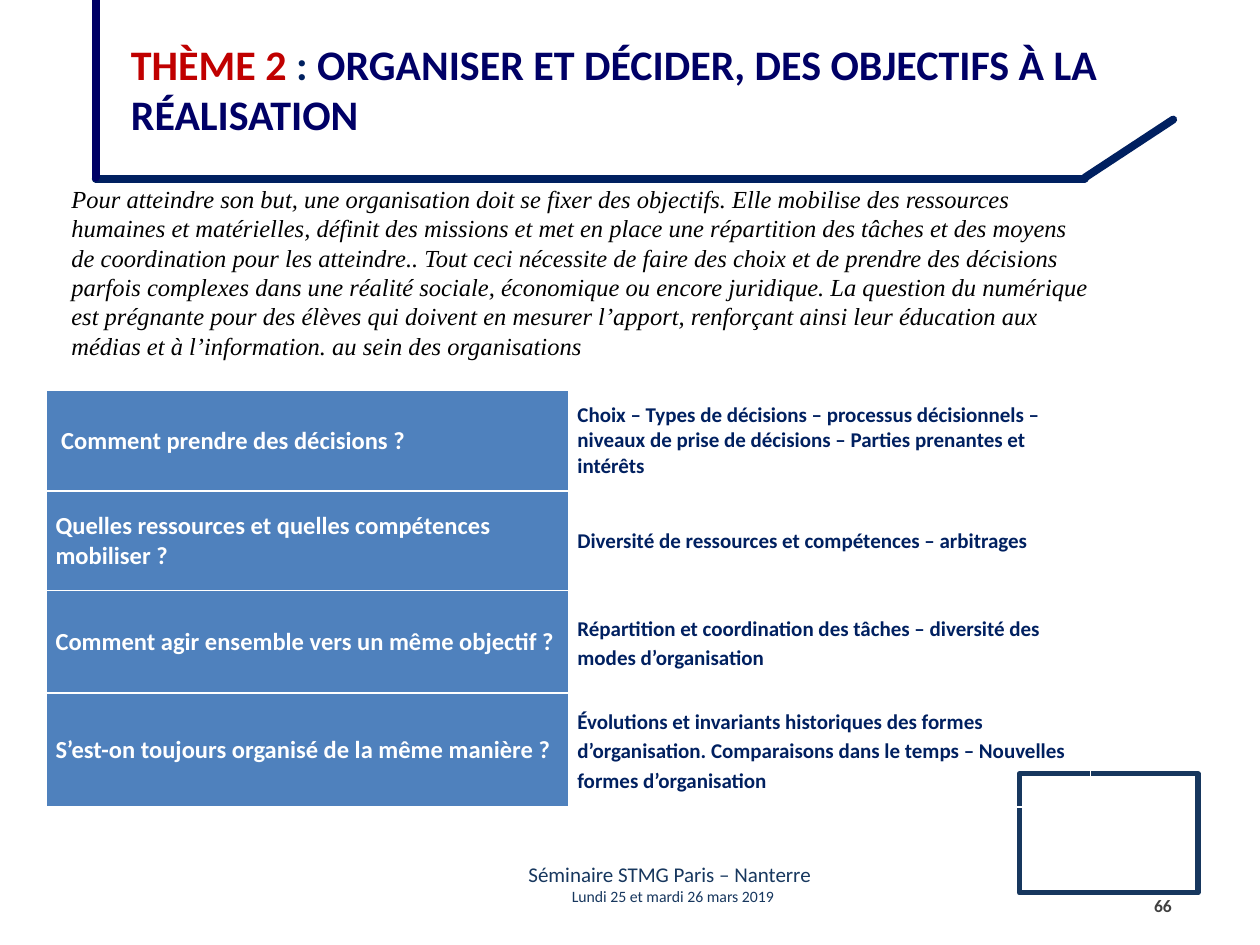
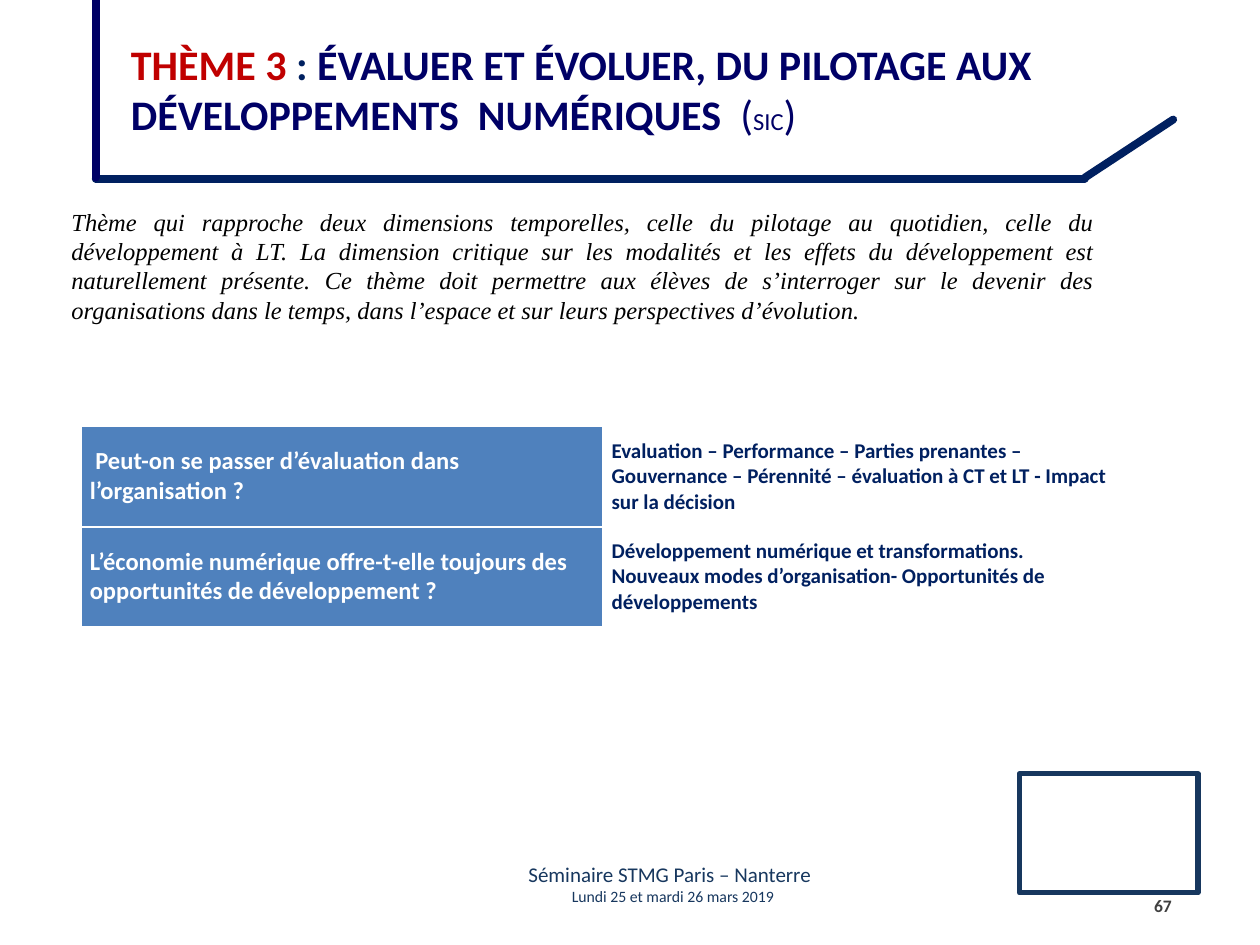
"""Build the two STMG theme slides: title frame, introduction, question table and seminar footer."""
import lxml.etree
import pptx
import pptx.dml.color
import pptx.enum.shapes
import pptx.enum.text
import pptx.oxml.ns
import pptx.util

Cm, Pt = pptx.util.Cm, pptx.util.Pt
RGBColor = pptx.dml.color.RGBColor
ALIGN, ANCHOR = pptx.enum.text.PP_ALIGN, pptx.enum.text.MSO_ANCHOR
SHAPES, CONNECTORS = pptx.enum.shapes.MSO_SHAPE, pptx.enum.shapes.MSO_CONNECTOR
qn, SubElement = pptx.oxml.ns.qn, lxml.etree.SubElement

NAVY = RGBColor(0x00, 0x20, 0x60)
INDIGO = RGBColor(0x00, 0x00, 0x66)
SLATE = RGBColor(0x17, 0x37, 0x5E)
CRIMSON = RGBColor(0xC0, 0x00, 0x00)
BLUE = RGBColor(0x4F, 0x81, 0xBD)
WHITE = RGBColor(0xFF, 0xFF, 0xFF)
BLACK = RGBColor(0x00, 0x00, 0x00)
CHARCOAL = RGBColor(0x40, 0x40, 0x40)

TITLE = {"name": "Calibri", "size": Pt(24), "bold": True}
TITLE_LIGHT = {"name": "Calibri", "size": Pt(24), "bold": False}
TITLE_SMALL = {"name": "Calibri", "size": Pt(14), "bold": False}
INTRO = {"name": "Times New Roman", "size": Pt(14), "italic": True}
QUESTION = {"name": "Calibri", "size": Pt(14), "bold": True}
NOTIONS = {"name": "Calibri", "size": Pt(12), "bold": True}
FOOTER = {"name": "Calibri", "size": Pt(12)}
FOOTER_DATE = {"name": "Calibri", "size": Pt(9)}
NUMBER = {"name": "Calibri", "size": Pt(10), "bold": True}

FRAME_LINES = [
    (1.93, 3.6, 21.87, 3.6, NAVY),
    (21.87, 3.58, 23.65, 2.41, NAVY),
    (1.93, 3.58, 1.93, 0, INDIGO),
]
COLUMN_WIDTH = 10.52

THEMES = [
    {
        "number": "66",
        "title": [
            ("THÈME 2 ", TITLE, CRIMSON),
            (": ", TITLE, NAVY),
            ("ORGANISER ET DÉCIDER, DES OBJECTIFS À LA RÉALISATION", TITLE, INDIGO),
        ],
        "intro": "Pour atteindre son but, une organisation doit se fixer des objectifs. Elle mobilise "
                 "des ressources humaines et matérielles, définit des missions et met en place une "
                 "répartition des tâches et des moyens de coordination pour les atteindre.. Tout ceci "
                 "nécessite de faire des choix et de prendre des décisions parfois complexes dans une "
                 "réalité sociale, économique ou encore juridique. La question du numérique est "
                 "prégnante pour des élèves qui doivent en mesurer l’apport, renforçant ainsi leur "
                 "éducation aux médias et à l’information. au sein des organisations",
        "intro_place": (1.19, 3.58, 21.13, 3.84),
        "intro_align": ALIGN.LEFT,
        "table_corner": (0.94, 7.87),
        "rows": [
            (2.03, 1, " Comment prendre des décisions ?",
             "Choix – Types de décisions – processus décisionnels – niveaux de prise de décisions – "
             "Parties prenantes et intérêts"),
            (2.01, 1, "Quelles ressources et quelles compétences mobiliser ?",
             "Diversité de ressources et compétences – arbitrages"),
            (2.06, 1.15, "Comment agir ensemble vers un même objectif ?",
             "Répartition et coordination des tâches – diversité des modes d’organisation"),
            (2.3, 1.15, "S’est-on toujours organisé de la même manière ?",
             "Évolutions et invariants historiques des formes d’organisation. Comparaisons dans le "
             "temps – Nouvelles formes d’organisation"),
        ],
    },
    {
        "number": "67",
        "title": [
            ("THÈME 3 ", TITLE, CRIMSON),
            (": ", TITLE, NAVY),
            ("ÉVALUER ET ÉVOLUER, DU PILOTAGE AUX DÉVELOPPEMENTS  NUMÉRIQUES  ", TITLE, INDIGO),
            ("(", TITLE_LIGHT, INDIGO),
            ("SIC", TITLE_SMALL, INDIGO),
            (")", TITLE_LIGHT, INDIGO),
        ],
        "intro": "Thème qui rapproche deux dimensions temporelles, celle du pilotage au quotidien, "
                 "celle du développement à LT. La dimension critique sur les modalités et les effets "
                 "du développement est naturellement présente. Ce thème doit permettre aux élèves de "
                 "s’interroger sur le devenir des organisations dans le temps, dans l’espace et sur "
                 "leurs perspectives d’évolution.",
        "intro_place": (1.19, 4.04, 21.13, 2.64),
        "intro_align": ALIGN.JUSTIFY,
        "table_corner": (1.63, 8.59),
        "rows": [
            (2.03, 1, " Peut-on se passer d’évaluation dans l’organisation ?",
             "Evaluation – Performance – Parties prenantes – Gouvernance – Pérennité – évaluation à "
             "CT et LT - Impact sur la décision"),
            (2.01, 1, "L’économie numérique offre-t-elle toujours des opportunités de développement ?",
             "Développement numérique et transformations. Nouveaux modes d’organisation- "
             "Opportunités de développements"),
        ],
    },
]


def write_spans(para, spans):
    """Add formatted runs to a paragraph."""
    for text, style, color in spans:
        span = para.add_run()
        span.text = text
        for name, value in style.items():
            setattr(span.font, name, value)
        span.font.color.rgb = color


def add_text(slide, place, lines, align=ALIGN.LEFT, anchor=ANCHOR.TOP):
    """Add a wrapped text box with one paragraph per list of runs."""
    box = slide.shapes.add_textbox(*map(Cm, place))
    frame = box.text_frame
    frame.word_wrap = True
    frame.vertical_anchor = anchor
    for index, spans in enumerate(lines):
        para = frame.add_paragraph() if index else frame.paragraphs[0]
        para.alignment = align
        write_spans(para, spans)


deck = pptx.Presentation()
deck.slide_width, deck.slide_height = Cm(25.4), Cm(19.05)

for theme in THEMES:
    slide = deck.slides.add_slide(deck.slide_layouts[6])

    for *ends, color in FRAME_LINES:
        line = slide.shapes.add_connector(CONNECTORS.STRAIGHT, *map(Cm, ends))
        line.line.color.rgb = color
        line.line.width = Pt(4.5)
        properties = line._element.spPr
        properties.find(qn("a:ln")).set("cap", "rnd")
        SubElement(properties, qn("a:effectLst"))

    add_text(slide, (9.22, 17.25, 8.76, 1.14), [
        [("Séminaire STMG Paris – Nanterre  ", FOOTER, SLATE)],
        [("Lundi 25 et mardi 26 mars 2019 ", FOOTER_DATE, SLATE)],
    ], ALIGN.CENTER)

    corner_frame = slide.shapes.add_shape(SHAPES.RECTANGLE, Cm(20.55), Cm(15.6), Cm(3.6), Cm(2.4))
    corner_frame.shadow.inherit = False
    corner_frame.fill.background()
    corner_frame.line.color.rgb = SLATE
    corner_frame.line.width = Pt(3)

    add_text(slide, (22.63, 17.75, 1.24, 1.02), [[(theme["number"], NUMBER, CHARCOAL)]],
             ALIGN.RIGHT, ANCHOR.MIDDLE)
    add_text(slide, (2.39, 0, 21.89, 3.58), [theme["title"]], anchor=ANCHOR.MIDDLE)

    rows = theme["rows"]
    size = (2 * COLUMN_WIDTH, sum(row[0] for row in rows))
    table = slide.shapes.add_table(len(rows), 2, *map(Cm, theme["table_corner"] + size)).table
    for column in table.columns:
        column.width = Cm(COLUMN_WIDTH)
    for row, (height, spacing, question, notions) in zip(table.rows, rows):
        row.height = Cm(height)
        question_cell, notions_cell = row.cells
        question_cell.fill.solid()
        question_cell.fill.fore_color.rgb = BLUE
        notions_cell.fill.background()
        write_spans(question_cell.text_frame.paragraphs[0], [(question, QUESTION, WHITE)])
        write_spans(notions_cell.text_frame.paragraphs[0], [(notions, NOTIONS, NAVY)])
        notions_cell.text_frame.paragraphs[0].line_spacing = spacing
        for cell in (question_cell, notions_cell):
            layout = {"vertical_anchor": ANCHOR.MIDDLE, "margin_left": Cm(0.18),
                      "margin_right": Cm(0.18), "margin_top": 0, "margin_bottom": 0}
            for name, value in layout.items():
                setattr(cell, name, value)
            properties = cell._tc.get_or_add_tcPr()
            for position, side in enumerate(("lnL", "lnR", "lnT", "lnB")):
                border = lxml.etree.Element(qn(f"a:{side}"), w=str(Pt(1)))
                fill = SubElement(border, qn("a:solidFill"))
                SubElement(fill, qn("a:srgbClr"), val=str(WHITE))
                properties.insert(position, border)

    add_text(slide, theme["intro_place"], [[(theme["intro"], INTRO, BLACK)]], theme["intro_align"])

deck.save("out.pptx")
